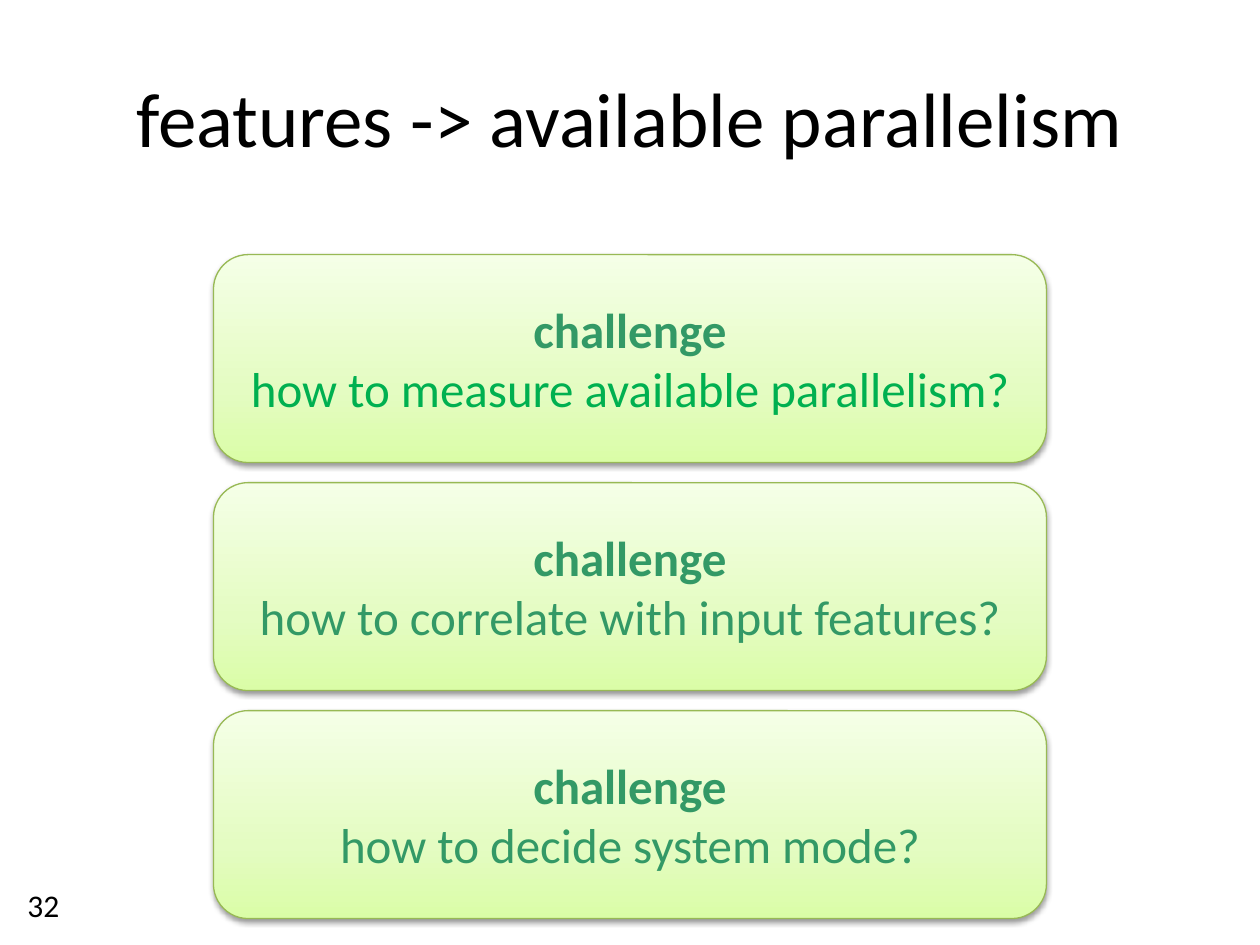
from copy import deepcopy

from lxml import etree
from pptx import Presentation
from pptx.dml.color import RGBColor
from pptx.enum.shapes import MSO_SHAPE
from pptx.enum.text import MSO_ANCHOR, PP_ALIGN
from pptx.oxml.ns import qn
from pptx.util import Pt

ROUND = MSO_SHAPE.ROUNDED_RECTANGLE
MIDDLE, TOP = MSO_ANCHOR.MIDDLE, MSO_ANCHOR.TOP
CENTER, LEFT = PP_ALIGN.CENTER, PP_ALIGN.LEFT
BLACK = RGBColor(0x00, 0x00, 0x00)
TEAL = RGBColor(0x33, 0x99, 0x66)
GREEN = RGBColor(0x00, 0xB0, 0x50)
EDGE = RGBColor(0x98, 0xB9, 0x55)
STOPS = [
    (0, RGBColor(0xDA, 0xFD, 0xA7)),
    (0.35, RGBColor(0xE4, 0xFC, 0xC2)),
    (1, RGBColor(0xF5, 0xFF, 0xE7)),
]

TITLE = "features -> available parallelism"
NUMBER = "32"
HEAD = "challenge"
CARDS = [
    ("how to measure available parallelism?", GREEN),
    ("how to correlate with input features?", TEAL),
    ("how to decide system mode?", TEAL),
]

WIDE, HIGH = 720, 540
CARD_W, CARD_H = 476, 118.8
CARD_TOP, STEP = 145.5, 130.3


def write(shape, lines, size, align, anchor):
    frame = shape.text_frame
    frame.word_wrap = True
    frame.vertical_anchor = anchor
    for i, (text, color, bold) in enumerate(lines):
        para = frame.add_paragraph() if i else frame.paragraphs[0]
        para.text = text
        para.alignment = align
        font = para.font
        font.name, font.size, font.bold = "Calibri", Pt(size), bold
        font.color.rgb = color


def shade(shape):
    fill = shape.fill
    fill.gradient()
    fill.gradient_angle = 90
    stops = shape._element.spPr.find(qn("a:gradFill")).find(qn("a:gsLst"))
    stops.append(deepcopy(stops[0]))
    for stop, (place, color) in zip(fill.gradient_stops, STOPS):
        stop.position = place
        stop.color.rgb = color


def drop(shape):
    shape.shadow.inherit = False
    effects = shape._element.spPr.find(qn("a:effectLst"))
    outer = etree.SubElement(
        effects, qn("a:outerShdw"), blurRad=str(Pt(3.1)), dist=str(Pt(1.6)),
        dir="5400000", rotWithShape="0")
    color = etree.SubElement(outer, qn("a:srgbClr"), val=str(BLACK))
    etree.SubElement(color, qn("a:alpha"), val="38000")


def main():
    deck = Presentation()
    deck.slide_width, deck.slide_height = Pt(WIDE), Pt(HIGH)
    shapes = deck.slides.add_slide(deck.slide_layouts[6]).shapes

    title = shapes.add_textbox(Pt(36), Pt(21.6), Pt(WIDE - 72), Pt(90))
    write(title, [(TITLE, BLACK, False)], 44, CENTER, MIDDLE)

    for i, (text, color) in enumerate(CARDS):
        card = shapes.add_shape(
            ROUND, Pt((WIDE - CARD_W) / 2), Pt(CARD_TOP + i * STEP),
            Pt(CARD_W), Pt(CARD_H))
        shade(card)
        card.line.color.rgb = EDGE
        card.line.width = Pt(0.75)
        drop(card)
        write(card, [(HEAD, TEAL, True), (text, color, False)], 28, CENTER, MIDDLE)

    number = shapes.add_textbox(Pt(8.6), Pt(502.5), Pt(168), Pt(29))
    write(number, [(NUMBER, BLACK, False)], 18, LEFT, TOP)

    deck.save("out.pptx")


if __name__ == "__main__":
    main()
